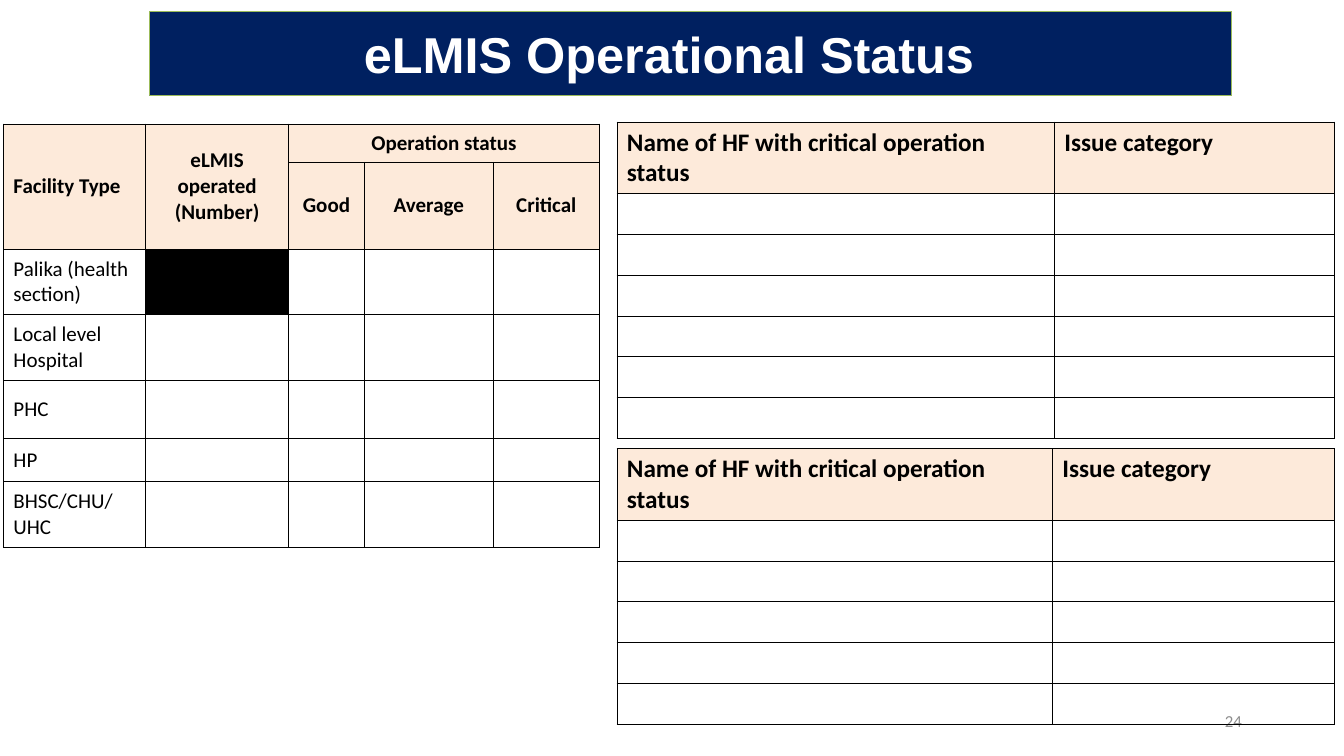
"""Build the eLMIS operational status slide."""
from dataclasses import dataclass, field
from typing import Optional

from lxml import etree
from pptx import Presentation
from pptx import util as u
from pptx.dml import color
from pptx.enum import text
from pptx.oxml import ns

WIDTH, HEIGHT = u.Inches(13.33), u.Inches(7.5)
BLACK, WHITE, NAVY, GREEN, PEACH, GREY = "000000", "FFFFFF", "002060", "9BBB59", "FDEADA", "8C8C8C"
LEFT, CENTER, RIGHT = text.PP_ALIGN.LEFT, text.PP_ALIGN.CENTER, text.PP_ALIGN.RIGHT
TOP, MIDDLE, BOTTOM = text.MSO_ANCHOR.TOP, text.MSO_ANCHOR.MIDDLE, text.MSO_ANCHOR.BOTTOM


@dataclass
class Label:
    """Text of one table cell, with its place and format."""
    row: int
    column: int
    words: str
    bold: bool = True
    align: text.PP_ALIGN = LEFT
    anchor: text.MSO_ANCHOR = MIDDLE
    span: tuple[int, int] = (1, 1)


@dataclass
class Grid:
    """A table, with lengths in percent of the slide's size."""
    left: float
    top: float
    columns: list[float]
    rows: list[float]
    labels: list[Label]
    size: int
    column_fills: list[Optional[str]]
    header_rows: int = 1
    special_fills: dict[tuple[int, int], str] = field(default_factory=dict)


def across(share: float) -> int:
    """Turn a percentage of the slide's width into a length."""
    return round(WIDTH * share / 100)


def down(share: float) -> int:
    """Turn a percentage of the slide's height into a length."""
    return round(HEIGHT * share / 100)


def paint(target, value: str) -> None:
    """Give a fill or line fill a solid colour."""
    target.solid()
    target.fore_color.rgb = color.RGBColor.from_string(value)


def write(frame, words: str, *, size: int, font: str = "Calibri", colour: str = BLACK,
          bold: bool = False, align: text.PP_ALIGN = LEFT) -> None:
    """Write one formatted paragraph in a text frame."""
    frame.word_wrap = True
    para = frame.paragraphs[0]
    para.alignment = align
    span = para.add_run()
    span.text = words
    span.font.name, span.font.size, span.font.bold = font, u.Pt(size), bold
    paint(span.font.fill, colour)


def outline(cell) -> None:
    """Draw thin black borders round a cell."""
    properties = cell._tc.get_or_add_tcPr()
    for side in ("lnL", "lnR", "lnT", "lnB"):
        border = etree.SubElement(properties, ns.qn(f"a:{side}"), w=str(u.Pt(0.5)))
        solid = etree.SubElement(border, ns.qn("a:solidFill"))
        etree.SubElement(solid, ns.qn("a:srgbClr"), val=BLACK)


def draw_title(page) -> None:
    """Format the title placeholder as a navy band."""
    box = page.shapes.title
    box.left, box.top, box.width, box.height = across(11.1), down(1.47), across(80.55), down(11.2)
    paint(box.fill, NAVY)
    paint(box.line.fill, GREEN)
    box.line.width = u.Pt(0.5)
    frame = box.text_frame
    frame.auto_size = text.MSO_AUTO_SIZE.NONE
    frame.vertical_anchor = MIDDLE
    frame.margin_right = across(3.9)
    write(frame, "eLMIS Operational Status", size=36, font="Arial", colour=WHITE,
          bold=True, align=CENTER)


def draw_number(page) -> None:
    """Add the page number."""
    box = page.shapes.add_textbox(across(70.65), down(92.67), across(22.5), down(5.33))
    box.text_frame.vertical_anchor = MIDDLE
    write(box.text_frame, "24", size=12, colour=GREY, align=RIGHT)


def draw_grid(page, grid: Grid) -> None:
    """Add a bordered table with its labels."""
    table = page.shapes.add_table(
        len(grid.rows), len(grid.columns), across(grid.left), down(grid.top),
        across(sum(grid.columns)), down(sum(grid.rows))).table
    table.first_row = table.horz_banding = False
    for column, share in zip(table.columns, grid.columns):
        column.width = across(share)
    for row, share in zip(table.rows, grid.rows):
        row.height = down(share)
    for i in range(len(grid.rows)):
        for j, column_fill in enumerate(grid.column_fills):
            cell = table.cell(i, j)
            outline(cell)
            fill = PEACH if i < grid.header_rows else grid.special_fills.get((i, j), column_fill)
            if fill:
                paint(cell.fill, fill)
            else:
                cell.fill.background()
    for label in grid.labels:
        cell = table.cell(label.row, label.column)
        if label.span != (1, 1):
            height, width = label.span
            cell.merge(table.cell(label.row + height - 1, label.column + width - 1))
        cell.vertical_anchor = label.anchor
        write(cell.text_frame, label.words, size=grid.size, bold=label.bold, align=label.align)


def issue_grid(top: float, columns: list[float], blank_rows: int, fill: Optional[str]) -> Grid:
    """Describe a table of facilities in critical status."""
    labels = [Label(0, 0, "Name of HF with critical operation status", anchor=BOTTOM),
              Label(0, 1, "Issue category", anchor=TOP)]
    return Grid(45.9, top, columns, [9.47] + [5.4] * blank_rows, labels, 18, [fill] * 2)


def status_grid() -> Grid:
    """Describe the table of operation status by facility type."""
    facilities = ["Palika (health section)", "Local level Hospital", "PHC", "HP", "BHSC/CHU/UHC"]
    labels = [Label(0, 0, "Facility Type", span=(2, 1)),
              Label(0, 1, "eLMIS operated (Number)", align=CENTER, span=(2, 1)),
              Label(0, 2, "Operation status", align=CENTER, span=(1, 3))]
    labels += [Label(1, j, words, align=CENTER)
               for j, words in enumerate(["Good", "Average", "Critical"], 2)]
    labels += [Label(i, 0, words, bold=False) for i, words in enumerate(facilities, 2)]
    return Grid(0.25, 16.4, [10.58, 10.65, 5.63, 9.6, 7.88],
                [5.07, 11.47, 8.67, 8.67, 7.73, 5.73, 8.67], labels, 15,
                [None, None, WHITE, WHITE, WHITE], 2, {(2, 1): BLACK})


def main() -> None:
    """Build and save the deck."""
    deck = Presentation()
    deck.slide_width, deck.slide_height = WIDTH, HEIGHT
    page = deck.slides.add_slide(deck.slide_layouts[5])
    draw_title(page)
    draw_number(page)
    for grid in (status_grid(), issue_grid(16.13, [32.55, 20.85], 6, WHITE),
                 issue_grid(59.33, [32.4, 21], 5, None)):
        draw_grid(page, grid)
    deck.save("out.pptx")


if __name__ == "__main__":
    main()
